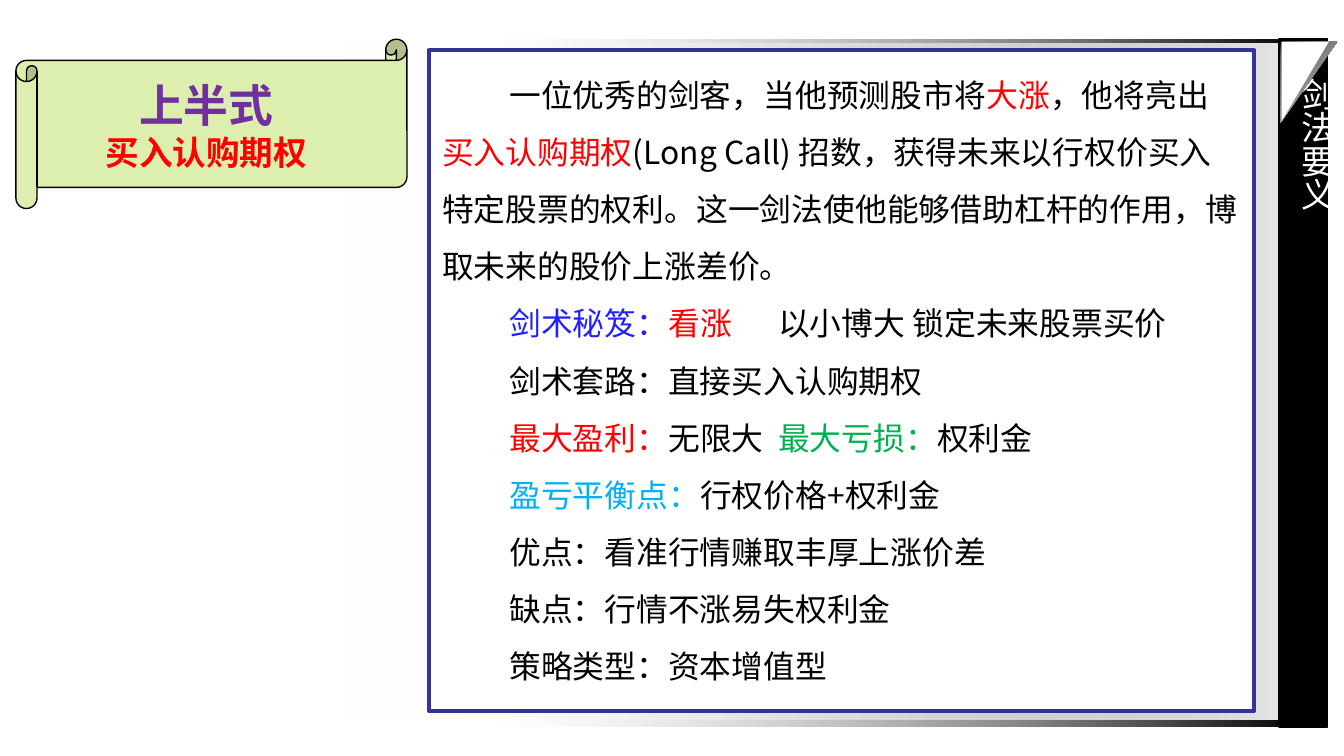
from lxml.etree import SubElement
from pptx import Presentation
from pptx.dml.color import RGBColor
from pptx.enum.shapes import MSO_SHAPE as Kind
from pptx.enum.text import MSO_ANCHOR as Anchor, PP_ALIGN as Align
from pptx.oxml.ns import qn
from pptx.util import Pt

SANS, BOLD = "Noto Sans CJK JP", "Noto Sans CJK SC"
BLACK, WHITE, RED = "000000", "FFFFFF", "FF0000"
BODY = [
    ([("一位优秀的剑客，当他预测股市将", BLACK), ("大涨", RED),
      ("，他将亮出", BLACK), ("买入认购期权", RED),
      ("(Long Call) 招数，获得未来以行权价买入特定股票的权利。"
       "这一剑法使他能够借助杠杆的作用，博取未来的股价上涨差价。", BLACK)], []),
    ([("剑术秘笈：", "2121FF"), ("看涨", RED),
      ("\t以小博大\t锁定未来股票买价", BLACK)], [174.5, 257.5]),
    ([("剑术套路：直接买入认购期权", BLACK)], []),
    ([("最大盈利：", RED), ("无限大\t", BLACK), ("最大亏损：", "00B050"),
      ("权利金", BLACK)], [210]),
    ([("盈亏平衡点：", "00B0F0"), ("行权价格+权利金", BLACK)], []),
    ([("优点：看准行情赚取丰厚上涨价差", BLACK)], []),
    ([("缺点：行情不涨易失权利金", BLACK)], []),
    ([("策略类型：资本增值型", BLACK)], []),
]


def color(code):
    """Turn a hex string into a colour."""
    return RGBColor.from_string(code)


def place(item, box):
    """Move an item to a box of left, top, width and height."""
    item.left, item.top, item.width, item.height = map(Pt, box)


def shape(slide, kind, box, fill=None, line=None, width=0.75):
    """Add a flat shape with an optional solid fill and line."""
    item = slide.shapes.add_shape(kind, *map(Pt, box))
    item.shadow.inherit = False
    if fill:
        item.fill.solid()
        item.fill.fore_color.rgb = color(fill)
    if line:
        item.line.color.rgb = color(line)
        item.line.width = Pt(width)
    else:
        item.line.fill.background()
    return item


def blend(item, start, end, angle=0, clear=False):
    """Fill a shape with two colours, the first one clear if asked."""
    item.fill.gradient()
    item.fill.gradient_angle = angle
    stops = item.fill.gradient_stops
    for stop, code, spot in zip(stops, (start, end), (0, 1)):
        stop.color.rgb = color(code)
        stop.position = spot
    if clear:
        tone = next(item._element.iter(qn("a:srgbClr")))
        SubElement(tone, qn("a:alpha"), val="0")


def write(para, text, size, code, face=SANS, bold=False):
    """Add one formatted run to a paragraph."""
    run = para.add_run()
    run.text = text
    font = run.font
    font.size, font.name, font.bold = Pt(size), face, bold
    font.color.rgb = color(code)
    SubElement(run._r.get_or_add_rPr(), qn("a:ea"), typeface=face)


def backdrop(slide, box):
    """Draw the dark frame and the pale page that fade to the left."""
    left, top, width, height = box
    frame = shape(slide, Kind.RECTANGLE, box)
    blend(frame, "C0C0C0", BLACK, clear=True)
    page = shape(slide, Kind.RECTANGLE,
                 (left - 130.5, top + 2.25, width + 127.5, height - 6.5))
    blend(page, WHITE, "EAEAEA", clear=True)


def ribbon(slide, box):
    """Draw the black side band with its label and folded corner."""
    left, top, width, height = box
    shape(slide, Kind.RECTANGLE, box, BLACK, BLACK)
    label = slide.shapes.add_textbox(
        *map(Pt, (left - 2, top + 13.5, 36.5, 327)))
    frame = label.text_frame
    frame.word_wrap = True
    frame._txBody.bodyPr.set("vert", "eaVert")
    write(frame.paragraphs[0], "剑法要义", 18, WHITE)
    fold = shape(slide, Kind.RIGHT_TRIANGLE,
                 (left - 5.75, top + 8, 43.25, 30.25))
    blend(fold, "595959", "C0C0C0", 45)
    flap = shape(slide, Kind.RIGHT_TRIANGLE,
                 (left - 7.25, top + 10, 42.5, 25.25), WHITE)
    fold.rotation = flap.rotation = 90


def panel(slide, box):
    """Draw the framed text with its tab stops."""
    item = shape(slide, Kind.RECTANGLE, box, WHITE, "333399", 2)
    frame = item.text_frame
    frame.word_wrap = True
    frame.vertical_anchor = Anchor.TOP
    for num, (runs, tabs) in enumerate(BODY):
        para = frame.add_paragraph() if num else frame.paragraphs[0]
        para.alignment = Align.LEFT
        para.line_spacing = 1.5
        props = para._p.get_or_add_pPr()
        props.set("indent", str(Pt(36)))
        if tabs:
            stops = SubElement(props, qn("a:tabLst"))
            for spot in tabs:
                SubElement(stops, qn("a:tab"), pos=str(Pt(spot)), algn="l")
        for text, code in runs:
            write(para, text, 17, code)


def scroll(slide, box):
    """Draw the scroll and set the title on it."""
    left, top, width, height = box
    shape(slide, Kind.HORIZONTAL_SCROLL, box, "DDEFAF", BLACK)
    title = slide.shapes.title
    place(title, (left + 25.25, top + 17.25, 153.5, 58.5))
    slide.shapes._spTree.append(title._element)
    frame = title.text_frame
    frame.word_wrap = True
    frame.vertical_anchor = Anchor.TOP
    lines = [("上半式", 24, "7030A0"), ("买入认购期权", 18, RED)]
    for num, (text, size, code) in enumerate(lines):
        para = frame.add_paragraph() if num else frame.paragraphs[0]
        para.alignment = Align.CENTER
        para.space_before = Pt(0)
        write(para, text, size, code, BOLD, True)


def main():
    """Build the slide and save it."""
    deck = Presentation()
    deck.slide_width, deck.slide_height = Pt(720), Pt(405)
    slide = deck.slides.add_slide(deck.slide_layouts[5])
    backdrop(slide, (263.5, 21, 437, 368.5))
    ribbon(slide, (685.25, 21, 26, 368.5))
    panel(slide, (229.75, 26.75, 442, 354.25))
    scroll(slide, (8.5, 21, 209.5, 90.75))
    deck.save("out.pptx")


if __name__ == "__main__":
    main()
